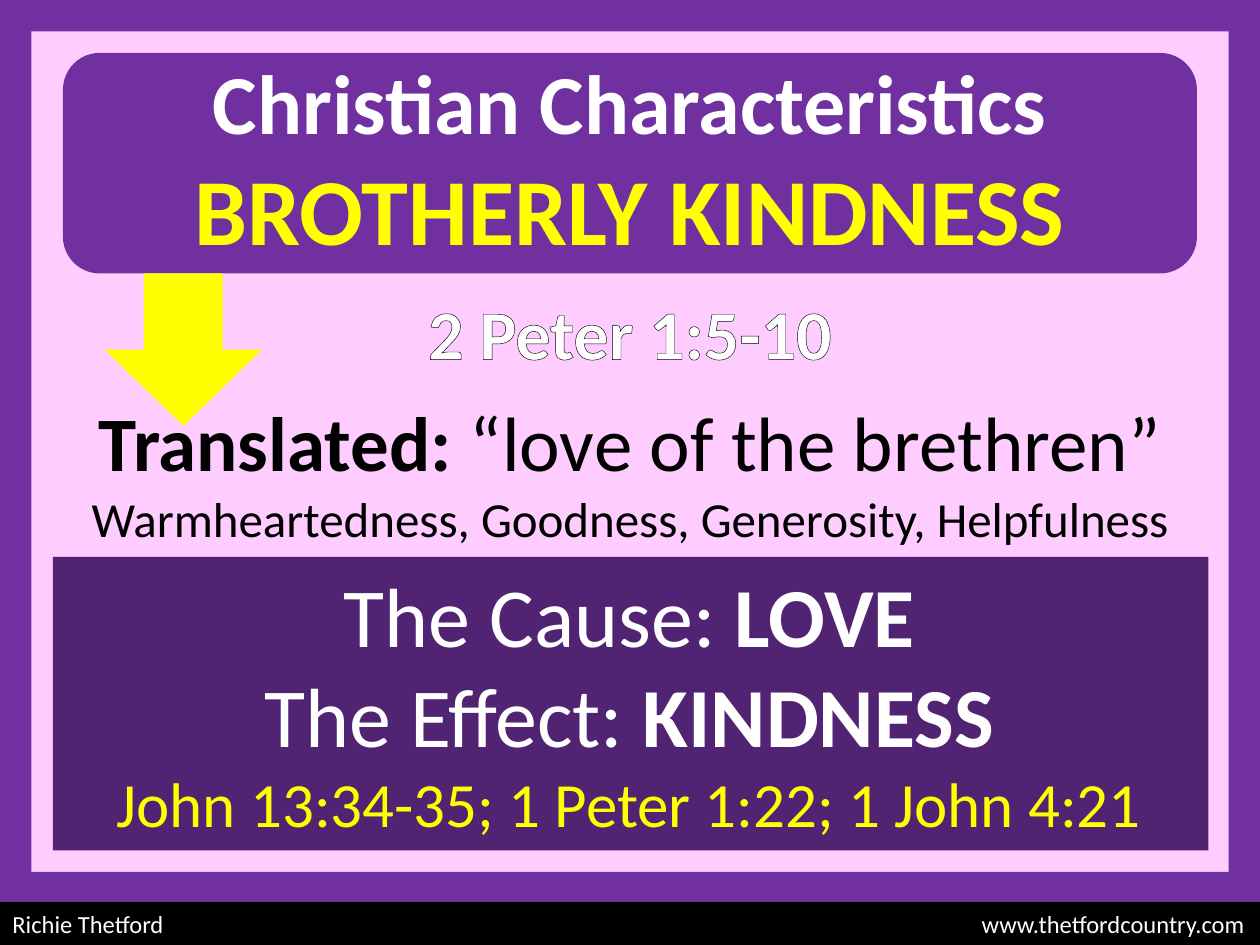
from dataclasses import dataclass

from lxml.etree import SubElement
from pptx import Presentation
from pptx.dml.color import RGBColor
from pptx.enum.shapes import MSO_SHAPE as Shape
from pptx.enum.text import MSO_ANCHOR as Anchor, PP_ALIGN as Align
from pptx.oxml import parse_xml
from pptx.oxml.ns import nsdecls, qn
from pptx.util import Inches, Pt


@dataclass(frozen=True)
class Theme:
    font: str = "Calibri"
    pink: str = "FFCCFF"
    purple: str = "7030A0"
    plum: str = "512373"
    yellow: str = "FFFF00"
    white: str = "FFFFFF"
    black: str = "000000"
    title: int = 54
    heading: int = 48
    translation: int = 44
    passage: int = 40
    verses: int = 36
    synonyms: int = 28
    footer: int = 14


theme = Theme()
outline_xml = (f'<a:ln {nsdecls("a")} w="12700"><a:solidFill>'
               f'<a:srgbClr val="{theme.black}"/></a:solidFill></a:ln>')
shadow_xml = (f'<a:effectLst {nsdecls("a")}><a:outerShdw dist="38100" dir="2700000" algn="tl">'
              f'<a:srgbClr val="{theme.black}"/></a:outerShdw></a:effectLst>')


def add_block(kind, box, color):
    block = slide.shapes.add_shape(kind, *map(Inches, box))
    block.shadow.inherit = False
    block.fill.solid()
    block.fill.fore_color.rgb = RGBColor.from_string(color)
    block.line.fill.background()
    return block


def write_lines(frame, lines, align=Align.CENTER, effect=None):
    frame.word_wrap = True
    for number, line in enumerate(lines):
        paragraph = frame.paragraphs[0] if number == 0 else frame.add_paragraph()
        paragraph.alignment = align
        for words, size, color, bold in line:
            run = paragraph.add_run()
            run.text = words
            run.font.color.rgb = RGBColor.from_string(color)
            for attribute, value in {"name": theme.font, "size": Pt(size), "bold": bold}.items():
                setattr(run.font, attribute, value)
            properties = run._r.get_or_add_rPr()
            if effect == "outline":
                properties.insert(0, parse_xml(outline_xml))
            elif effect == "shadow":
                properties.insert(1, parse_xml(shadow_xml))


presentation = Presentation()
presentation.slide_width = Inches(10)
presentation.slide_height = Inches(7.5)
slide = presentation.slides.add_slide(presentation.slide_layouts[6])
slide.background.fill.solid()
slide.background.fill.fore_color.rgb = RGBColor.from_string(theme.pink)

border = 0.25
for box in [
    (0, 0, border, 7.5),
    (10 - border, 0, border, 7.5),
    (0, 0, 10, border),
    (0, 6.92, 10, border),
]:
    add_block(Shape.RECTANGLE, box, theme.purple)

add_block(Shape.RECTANGLE, (0.42, 4.42, 9.17, 2.33), theme.plum)
add_block(Shape.ROUNDED_RECTANGLE, (0.5, 0.42, 9, 1.75), theme.purple)
add_block(Shape.DOWN_ARROW, (0.83, 2.17, 1.25, 1.21), theme.yellow)

translation = [[("Translated: ", theme.translation, theme.black, True),
                ("“love of the brethren”", theme.translation, theme.black, False)]]
cause_and_effect = [
    [("The Cause: ", theme.heading, theme.white, False),
     ("LOVE", theme.heading, theme.white, True)],
    [("The Effect: ", theme.heading, theme.white, False),
     ("KINDNESS", theme.heading, theme.white, True)],
    [("John 13:34-35; 1 Peter 1:22; 1 John 4:21", theme.verses, theme.yellow, False)],
]
synonyms = [[("Warmheartedness, Goodness, Generosity, Helpfulness",
              theme.synonyms, theme.black, False)]]
title = [
    [("Christian Characteristics", theme.heading, theme.white, True)],
    [("BROTHERLY KINDNESS", theme.title, theme.yellow, True)],
]
passage = [[("2 Peter 1:5-10", theme.passage, theme.white, True)]]

for box, lines, effect in [
    ((0.25, 3.08, 9.5, 0.83), translation, None),
    ((0.33, 4.42, 9.33, 2.32), cause_and_effect, "shadow"),
    ((0.25, 3.83, 9.5, 0.57), synonyms, None),
    ((0.5, 0.35, 9, 1.82), title, None),
    ((0.25, 2.25, 9.5, 0.77), passage, "outline"),
]:
    write_lines(slide.shapes.add_textbox(*map(Inches, box)).text_frame, lines, effect=effect)

footer = add_block(Shape.RECTANGLE, (0, 7.16, 10, 0.34), theme.black).text_frame
footer.vertical_anchor = Anchor.MIDDLE
write_lines(footer, [[("Richie Thetford\twww.thetfordcountry.com",
                       theme.footer, theme.white, False)]], Align.LEFT)
tab_stops = SubElement(footer.paragraphs[0]._p.get_or_add_pPr(), qn("a:tabLst"))
SubElement(tab_stops, qn("a:tab"), pos=str(Inches(9.78)), algn="r")

presentation.save("out.pptx")
